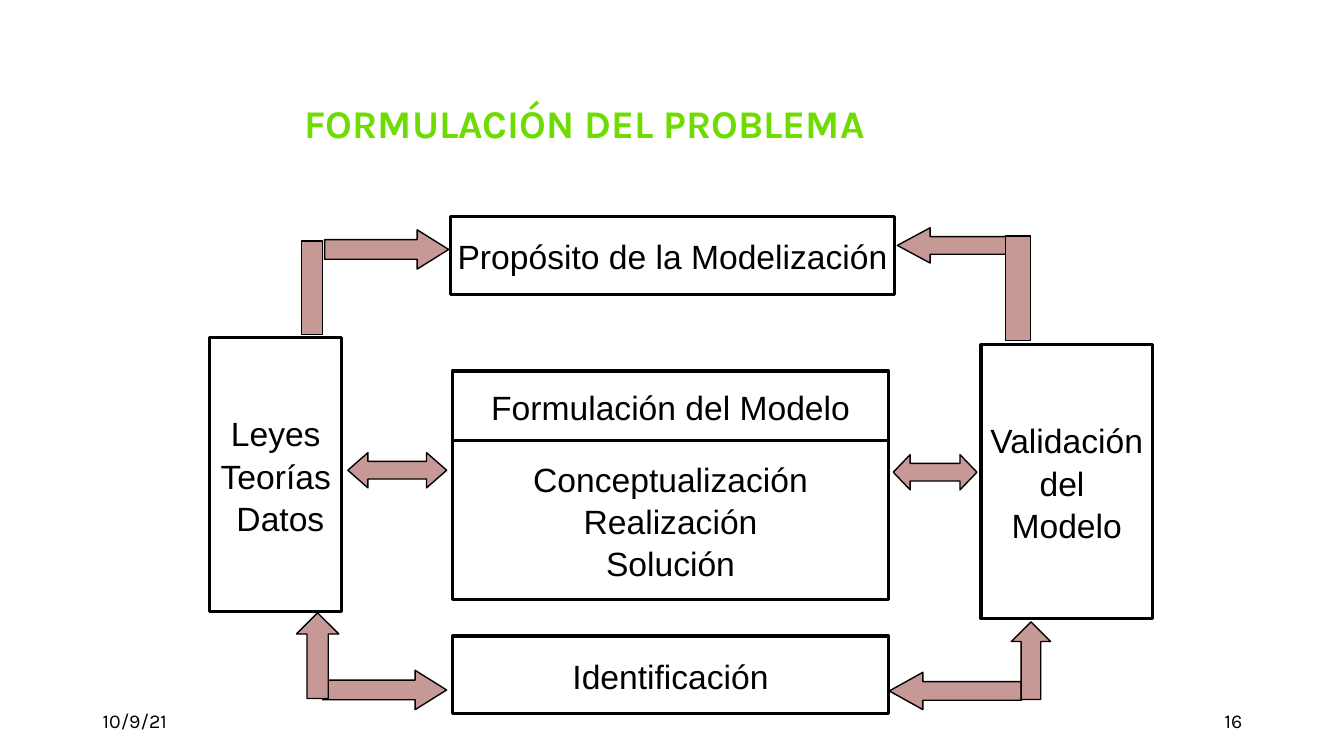
from pptx import Presentation
from pptx.dml.color import RGBColor
from pptx.enum.shapes import MSO_SHAPE
from pptx.enum.text import MSO_ANCHOR, MSO_AUTO_SIZE, PP_ALIGN
from pptx.util import Inches, Pt

COLORS = {"title": "6EDC00", "ink": "000000", "arrow": "C69896"}


def write(frame, lines, font, size, color, align, bold=False):
    """Fill a text frame with one paragraph per line, all formatted alike."""
    frame.text = "\n".join(lines)
    frame.auto_size = MSO_AUTO_SIZE.NONE
    frame.vertical_anchor = MSO_ANCHOR.MIDDLE
    for paragraph in frame.paragraphs:
        paragraph.alignment = align
        for run in paragraph.runs:
            run.font.name = font
            run.font.size = Pt(size)
            run.font.bold = bold
            run.font.color.rgb = RGBColor.from_string(COLORS[color])


def add_outlined(kind, place, line_width):
    shape = slide.shapes.add_shape(kind, *map(Inches, place))
    shape.shadow.inherit = False
    shape.line.color.rgb = RGBColor.from_string(COLORS["ink"])
    shape.line.width = Pt(line_width)
    return shape


prs = Presentation()
prs.slide_width, prs.slide_height = Inches(13.33), Inches(7.5)
slide = prs.slides.add_slide(prs.slide_layouts[5])

title = slide.shapes.title
title.left, title.top, title.width, title.height = map(Inches, (2.92, 0.75, 8.5, 0.94))
write(title.text_frame, ["FORMULACIÓN DEL PROBLEMA"], "Karla", 28, "title",
      PP_ALIGN.LEFT, bold=True)

# Date and slide number
for left, text, align in [(0.92, "10/9/21", PP_ALIGN.LEFT), (9.42, "16", PP_ALIGN.RIGHT)]:
    footer = slide.shapes.add_textbox(Inches(left), Inches(6.95), Inches(3), Inches(0.4))
    footer.text_frame.word_wrap = True
    write(footer.text_frame, [text], "Karla", 14, "ink", align)

# Stages of the modelling cycle
stages = [
    ((2.08, 3.35, 1.31, 2.72), ["Leyes", "Teorías", " Datos"]),
    ((4.47, 2.15, 4.4, 0.77), ["Propósito de la Modelización"]),
    ((4.49, 4.37, 4.32, 1.58), ["Conceptualización", "Realización", "Solución"]),
    ((4.49, 3.68, 4.32, 0.69), ["Formulación del Modelo"]),
    ((9.73, 3.42, 1.7, 2.72), ["Validación", "del ", "Modelo"]),
    ((4.49, 6.31, 4.32, 0.77), ["Identificación"]),
]
for place, lines in stages:
    stage = add_outlined(MSO_SHAPE.RECTANGLE, place, 2.25)
    stage.fill.background()
    write(stage.text_frame, lines, "Arial", 24, "ink", PP_ALIGN.CENTER)
    stage.text_frame.word_wrap = False
    for paragraph in stage.text_frame.paragraphs:
        paragraph.line_spacing = 1.05

# Links between stages: shape, place, length of the arrowhead relative to its height
links = [
    (MSO_SHAPE.LEFT_RIGHT_ARROW, (3.45, 4.49, 0.98, 0.35), 0.57),
    (MSO_SHAPE.LEFT_RIGHT_ARROW, (8.86, 4.51, 0.83, 0.35), 0.48),
    (MSO_SHAPE.LEFT_ARROW, (8.82, 6.67, 1.31, 0.37), 0.9),
    (MSO_SHAPE.UP_ARROW, (10.03, 6.17, 0.39, 0.77), 0.5),
    (MSO_SHAPE.LEFT_ARROW, (8.9, 2.26, 1.29, 0.35), 0.93),
    (MSO_SHAPE.RIGHT_ARROW, (3.2, 6.65, 1.23, 0.39), 0.8),
    (MSO_SHAPE.RIGHT_ARROW, (3.22, 2.28, 1.23, 0.39), 0.8),
    (MSO_SHAPE.RECTANGLE, (2.99, 2.39, 0.21, 0.93), None),
    (MSO_SHAPE.UP_ARROW, (2.94, 6.08, 0.42, 0.85), 0.5),
    (MSO_SHAPE.RECTANGLE, (9.97, 2.34, 0.25, 1.04), None),
]
for kind, place, head in links:
    link = add_outlined(kind, place, 1)
    link.fill.solid()
    link.fill.fore_color.rgb = RGBColor.from_string(COLORS["arrow"])
    if head:
        link.adjustments[0] = 0.5
        link.adjustments[1] = head

prs.save("out.pptx")
